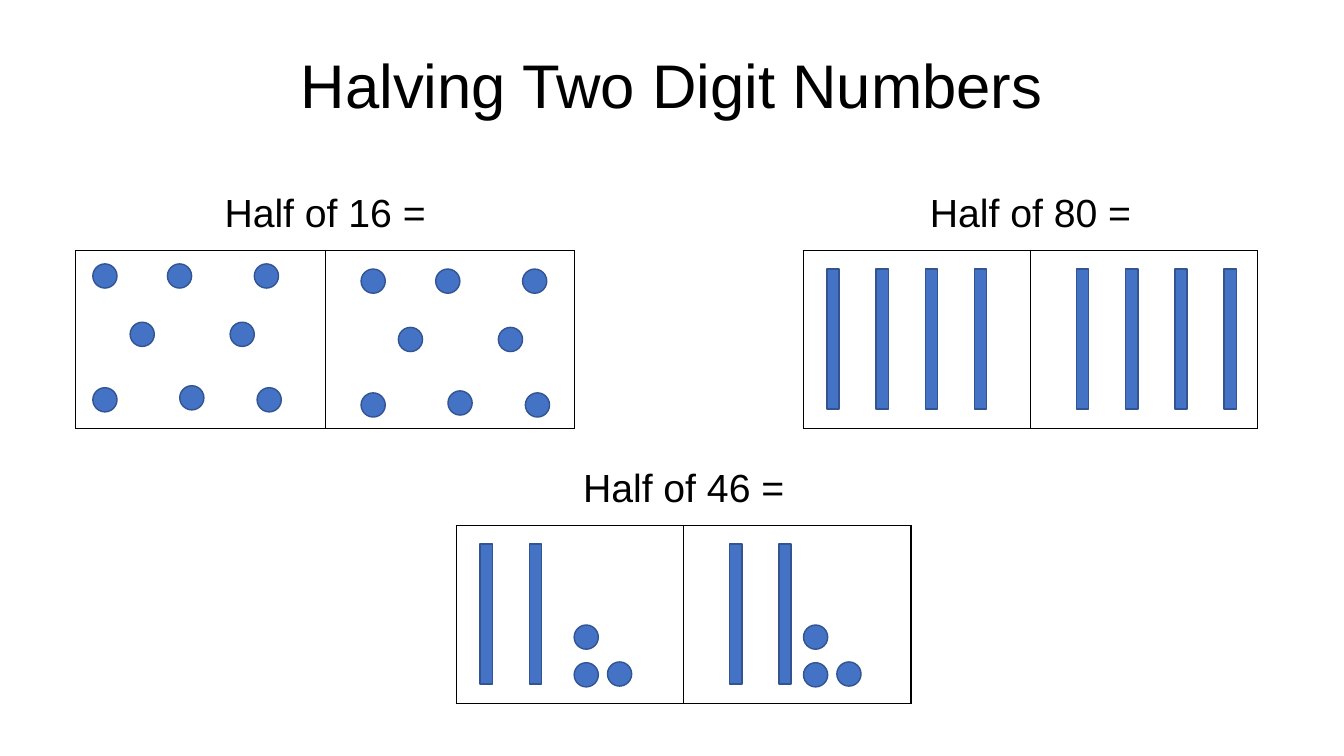
import pptx
import pptx.dml.color
import pptx.enum.shapes
import pptx.enum.text
import pptx.oxml
import pptx.oxml.ns
import pptx.util

Cm, Pt = pptx.util.Cm, pptx.util.Pt
SHAPES = pptx.enum.shapes.MSO_SHAPE
COLORS = {"text": "000000", "grid": "000000", "cell": "FFFFFF",
          "counter": "4472C4", "outline": "325491"}
LABEL_HEIGHT, GRID_OFFSET, GRID_HEIGHT = 1.47, 1.57, 4.47
DOT_SIZE = 0.61
ROD_WIDTH, ROD_HEIGHT, ROD_PITCH = 0.31, 3.53, 1.24
ROD_LEFT, ROD_TOP, ROD_SHIFT = 0.6, 0.46, 6.29

# Dot positions in the left half, in cm from the corner of the grid
EIGHT_ONES = [(0.43, 0.33), (2.31, 0.33), (4.5, 0.33), (1.37, 1.8), (3.89, 1.8),
              (0.43, 3.45), (2.62, 3.4), (4.57, 3.45)]
THREE_ONES = [(2.97, 3.45), (3.81, 3.43), (2.97, 2.5)]


def color(name):
    return pptx.dml.color.RGBColor.from_string(COLORS[name])


def add_text(slide, box, text, size, anchor):
    frame = slide.shapes.add_textbox(*map(Cm, box)).text_frame
    frame.word_wrap = True
    frame.vertical_anchor = anchor
    paragraph = frame.paragraphs[0]
    paragraph.text = text
    paragraph.alignment = pptx.enum.text.PP_ALIGN.CENTER
    paragraph.line_spacing = 0.9
    paragraph.font.name = "Arial"
    paragraph.font.size = Pt(size)
    paragraph.font.color.rgb = color("text")


def add_halves(slide, left, top, width):
    """Draw a bordered table of two equal empty cells."""
    halves = slide.shapes.add_table(
        1, 2, Cm(left), Cm(top), Cm(width), Cm(GRID_HEIGHT)).table
    halves.first_row = halves.horz_banding = False
    for cell in halves.iter_cells():
        properties = cell._tc.get_or_add_tcPr()
        for side in ("lnL", "lnR", "lnT", "lnB"):
            properties.append(pptx.oxml.parse_xml(
                f'<a:{side} {pptx.oxml.ns.nsdecls("a")} w="12700"><a:solidFill>'
                f'<a:srgbClr val="{COLORS["grid"]}"/></a:solidFill></a:{side}>'))
        cell.fill.solid()
        cell.fill.fore_color.rgb = color("cell")


def add_counter(slide, kind, left, top, width, height):
    counter = slide.shapes.add_shape(kind, Cm(left), Cm(top), Cm(width), Cm(height))
    counter.shadow.inherit = False
    counter.fill.solid()
    counter.fill.fore_color.rgb = color("counter")
    counter.line.color.rgb = color("outline")
    counter.line.width = Pt(1)


def add_problem(slide, left, top, width, number, tens=0, ones=(), ones_shift=(0, 0)):
    """Draw a label over two halves, each with the same tens rods and ones dots."""
    add_text(slide, (left, top, width, LABEL_HEIGHT), f"Half of {number} =", 28,
             pptx.enum.text.MSO_ANCHOR.TOP)
    grid_top = top + GRID_OFFSET
    add_halves(slide, left, grid_top, width)
    for half in range(2):
        for ten in range(tens):
            add_counter(slide, SHAPES.RECTANGLE,
                        left + ROD_LEFT + half * ROD_SHIFT + ten * ROD_PITCH,
                        grid_top + ROD_TOP, ROD_WIDTH, ROD_HEIGHT)
        for x, y in ones:
            add_counter(slide, SHAPES.OVAL, left + x + half * ones_shift[0],
                        grid_top + y + half * ones_shift[1], DOT_SIZE, DOT_SIZE)


def main():
    deck = pptx.Presentation()
    deck.slide_width, deck.slide_height = Cm(33.87), Cm(19.05)
    slide = deck.slides.add_slide(deck.slide_layouts[6])
    add_text(slide, (2.33, 0.38, 29.21, 3.68), "Halving Two Digit Numbers", 44,
             pptx.enum.text.MSO_ANCHOR.MIDDLE)
    add_problem(slide, 1.91, 4.75, 12.57, 16, ones=EIGHT_ONES, ones_shift=(6.76, 0.13))
    add_problem(slide, 20.24, 4.75, 11.46, 80, tens=4)
    add_problem(slide, 11.5, 11.68, 11.46, 46, tens=2, ones=THREE_ONES,
                ones_shift=(5.78, 0))
    deck.save("out.pptx")


if __name__ == "__main__":
    main()
